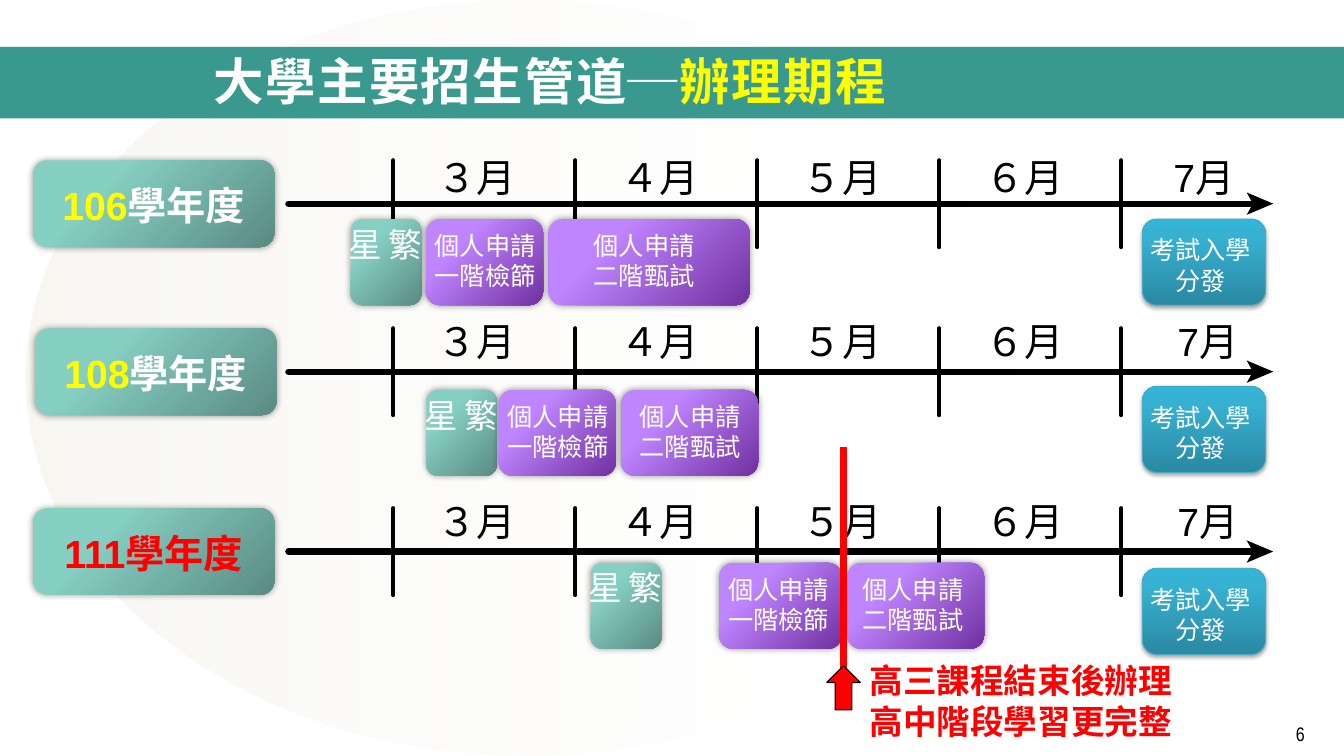
from lxml import etree
from pptx import Presentation
from pptx.dml.color import RGBColor
from pptx.enum import shapes, text
from pptx.oxml import ns
from pptx.util import Pt

WHITE = RGBColor(0xFF, 0xFF, 0xFF)
BLACK = RGBColor(0, 0, 0)
RED = RGBColor(0xFF, 0, 0)
YELLOW = RGBColor(0xFF, 0xFF, 0)
BAND = RGBColor(0x39, 0x99, 0x8E)
EXAM_LINE = RGBColor(0x46, 0xAA, 0xC5)
TEAL_DARK = RGBColor(0x5A, 0x8B, 0x83)
TEAL_LIGHT = RGBColor(0x86, 0xCF, 0xC3)
PURPLE_DARK = RGBColor(0x70, 0x30, 0xA0)
PURPLE_LIGHT = RGBColor(0xBF, 0x85, 0xFF)

# Content: gradient stops are (position %, colour, opacity %)
TEAL = [(29, TEAL_LIGHT, 100), (100, TEAL_DARK, 100)]
PURPLE = [(29, PURPLE_LIGHT, 100), (100, PURPLE_DARK, 100)]
BLUE = [(0, RGBColor(0x2A, 0x88, 0xA2), 100), (80, RGBColor(0x37, 0xB1, 0xD2), 100),
        (100, RGBColor(0x34, 0xB4, 0xD6), 100)]
BACKDROP = [(0, RGBColor(0xEE, 0xEC, 0xE1), 44), (100, WHITE, 0)]

TITLE = [("大學主要招生管道─", WHITE), ("辦理期程", YELLOW)]
MONTHS = ["３月", "４月", "５月", "６月", "7月"]
STAR = "繁星"
STAGE_ONE = ["個人申請", "一階檢篩"]
STAGE_TWO = ["個人申請", "二階甄試"]
EXAM = ["考試入學分發"]
CALLOUT = ["高三課程結束後辦理", "高中階段學習更完整"]

# Stages are (lines, left, width, label centre)
YEARS = [
    dict(year=[("106", YELLOW), ("學年度", WHITE)], left=23.5, axis=145.5, months=106,
         july=831, star=250.5, cards=156.5, exam=156.5,
         stages=[(STAGE_TWO, 391.5, 144, 460), (STAGE_ONE, 304, 84, 346.5)]),
    dict(year=[("108", YELLOW), ("學年度", WHITE)], left=25, axis=265.5, months=223,
         july=834, star=304.5, cards=278.5, exam=276,
         stages=[(STAGE_TWO, 443.5, 98, 493), (STAGE_ONE, 356, 84, 398.5)]),
    dict(year=[("111學年度", RED)], left=23.5, axis=394, months=352,
         july=834, star=422, cards=402, exam=406,
         stages=[(STAGE_TWO, 605, 98, 652), (STAGE_ONE, 513.5, 88, 556)]),
]

FIRST_TICK, TICK_GAP, HALF_TICK = 281, 130, 31
FIRST_MONTH, MONTH_GAP = 305.5, 130.5
AXIS_LEFT, AXIS_RIGHT, ARROW_TIP = 206, 897, 909.5
CARD_HEIGHT = 61.5

presentation = Presentation()
presentation.slide_width, presentation.slide_height = Pt(960), Pt(540)
slide = presentation.slides.add_slide(presentation.slide_layouts[5])


def add_preset(kind, left, top, width, height, fill=None, line=None):
    shape = slide.shapes.add_shape(kind, Pt(left), Pt(top), Pt(width), Pt(height))
    shape.shadow.inherit = False
    if fill is not None:
        shape.fill.solid()
        shape.fill.fore_color.rgb = fill
    if line is None:
        shape.line.fill.background()
    else:
        shape.line.color.rgb = line
        shape.line.width = Pt(0.75)
    return shape


def set_gradient(shape, stops, angle):
    shape.fill.background()
    gradient = etree.Element(ns.qn("a:gradFill"), rotWithShape="1")
    stop_list = etree.SubElement(gradient, ns.qn("a:gsLst"))
    for position, colour, opacity in stops:
        stop = etree.SubElement(stop_list, ns.qn("a:gs"), pos=str(position * 1000))
        rgb = etree.SubElement(stop, ns.qn("a:srgbClr"), val=str(colour))
        if opacity < 100:
            etree.SubElement(rgb, ns.qn("a:alpha"), val=str(opacity * 1000))
    etree.SubElement(gradient, ns.qn("a:lin"), ang=str(angle * 60000), scaled="0")
    properties = shape._element.spPr
    properties.replace(properties.find(ns.qn("a:noFill")), gradient)


def add_card(left, top, width, height, stops, angle=45, line=None,
             opacity=40, blur=5, distance=0, direction=0):
    shape = add_preset(shapes.MSO_SHAPE.ROUNDED_RECTANGLE, left, top, width, height, line=line)
    set_gradient(shape, stops, angle)
    effects = shape._element.spPr.find(ns.qn("a:effectLst"))
    shadow = etree.SubElement(effects, ns.qn("a:outerShdw"), blurRad=str(Pt(blur)),
                              dist=str(Pt(distance)), dir=str(direction * 60000),
                              algn="ctr", rotWithShape="0")
    rgb = etree.SubElement(shadow, ns.qn("a:srgbClr"), val="000000")
    etree.SubElement(rgb, ns.qn("a:alpha"), val=str(opacity * 1000))


def add_text(left, top, width, height, lines, size, align=text.PP_ALIGN.CENTER,
             anchor=text.MSO_ANCHOR.TOP, bold=False, font="Arial"):
    """Each line is a list of (text, colour) runs."""
    box = slide.shapes.add_textbox(Pt(left), Pt(top), Pt(width), Pt(height))
    frame = box.text_frame
    frame.word_wrap = True
    frame.vertical_anchor = anchor
    for number, runs in enumerate(lines):
        paragraph = frame.add_paragraph() if number else frame.paragraphs[0]
        paragraph.alignment = align
        paragraph.font.size = Pt(size)
        paragraph.font.bold = bold
        paragraph.font.name = font
        for words, colour in runs:
            run = paragraph.add_run()
            run.text = words
            run.font.color.rgb = colour
    return frame


def add_card_label(centre, middle, lines):
    add_text(centre - 43.5, middle - 25.5, 87, 51, [[(line, WHITE)] for line in lines], 18,
             anchor=text.MSO_ANCHOR.MIDDLE)


def add_line(x1, y1, x2, y2, width, colour=BLACK, cap="rnd"):
    line = slide.shapes.add_connector(shapes.MSO_CONNECTOR.STRAIGHT,
                                      Pt(x1), Pt(y1), Pt(x2), Pt(y2))
    line.line.color.rgb = colour
    line.line.width = Pt(width)
    line.line._get_or_add_ln().set("cap", cap)
    etree.SubElement(line._element.spPr, ns.qn("a:effectLst"))


def add_arrowhead(tip, axis):
    builder = slide.shapes.build_freeform(Pt(tip), Pt(axis))
    builder.add_line_segments([(Pt(tip - 19), Pt(axis + 8)), (Pt(tip - 14.5), Pt(axis)),
                               (Pt(tip - 19), Pt(axis - 8))], close=True)
    head = builder.convert_to_shape()
    head.shadow.inherit = False
    head.fill.solid()
    head.fill.fore_color.rgb = BLACK
    head.line.fill.background()


# Backdrop and title band
set_gradient(add_preset(shapes.MSO_SHAPE.OVAL, 18.5, 0, 714.5, 540), BACKDROP, 0)
add_preset(shapes.MSO_SHAPE.RECTANGLE, 0, 33.5, 960, 51, BAND)

# Title, brought in front of the band
title = slide.shapes.title
title.left, title.top, title.width, title.height = Pt(145.5), Pt(26), Pt(629.5), Pt(62.5)
slide.shapes._spTree.append(title._element)
title.text_frame.auto_size = text.MSO_AUTO_SIZE.NONE
title.text_frame.vertical_anchor = text.MSO_ANCHOR.MIDDLE
heading = title.text_frame.paragraphs[0]
heading.alignment = text.PP_ALIGN.LEFT
heading.font.size = Pt(36)
heading.font.bold = True
for words, colour in TITLE:
    run = heading.add_run()
    run.text = words
    run.font.color.rgb = colour
    run.font.name = "Noto Sans CJK SC"
    run.font._element.set("spc", "100")
    etree.SubElement(run.font._element, ns.qn("a:ea"), typeface="Noto Sans CJK SC")

# Slide number
number_frame = add_text(848, 512, 116, 18.5, [[("6", BLACK)]], 14,
                        align=text.PP_ALIGN.RIGHT, font="Arial Narrow")
number_frame.margin_right = Pt(32)

# One timeline per school year
for row in YEARS:
    axis, top = row["axis"], row["cards"]
    add_card(row["left"], axis - HALF_TICK, 172.5, 2 * HALF_TICK, TEAL)
    add_text(row["left"] - 3, axis - 19.5, 178.5, 41, [row["year"]], 28, bold=True)

    add_line(AXIS_LEFT, axis, AXIS_RIGHT, axis, 4.5)
    add_arrowhead(ARROW_TIP, axis)
    for column, month in enumerate(MONTHS):
        tick = FIRST_TICK + column * TICK_GAP
        add_line(tick, axis - HALF_TICK, tick, axis + HALF_TICK, 3)
        left = row["july"] if month == MONTHS[-1] else FIRST_MONTH + column * MONTH_GAP
        add_text(left, row["months"], 72, 41, [[(month, BLACK)]], 28,
                 align=text.PP_ALIGN.LEFT)

    add_card(row["star"], top, 50.5, CARD_HEIGHT, TEAL)
    star_frame = add_text(row["star"] + 2, top - 1, 44, 37, [[(STAR, WHITE)]], 24,
                          anchor=text.MSO_ANCHOR.MIDDLE)
    star_frame._txBody.bodyPr.set("vert", "eaVert")

    for lines, left, width, centre in row["stages"]:
        add_card(left, top, width, CARD_HEIGHT, PURPLE)
        add_card_label(centre, top + CARD_HEIGHT / 2 - 1, lines)

    add_card(816, row["exam"], 88, CARD_HEIGHT, BLUE, 270, EXAM_LINE,
             opacity=35, blur=3.1, distance=1.8, direction=90)
    add_card_label(857.5, row["exam"] + CARD_HEIGHT / 2 + 2, EXAM)

# Marker for the end of the final school year
add_line(602.5, 319, 602.5, 477, 4.5, RED, cap="flat")
add_preset(shapes.MSO_SHAPE.UP_ARROW, 590.5, 475.5, 24, 31.5, RED, BLACK)
add_text(614, 468, 246, 65.5, [[(line, RED)] for line in CALLOUT], 24,
         align=text.PP_ALIGN.LEFT, bold=True)

presentation.save("out.pptx")
